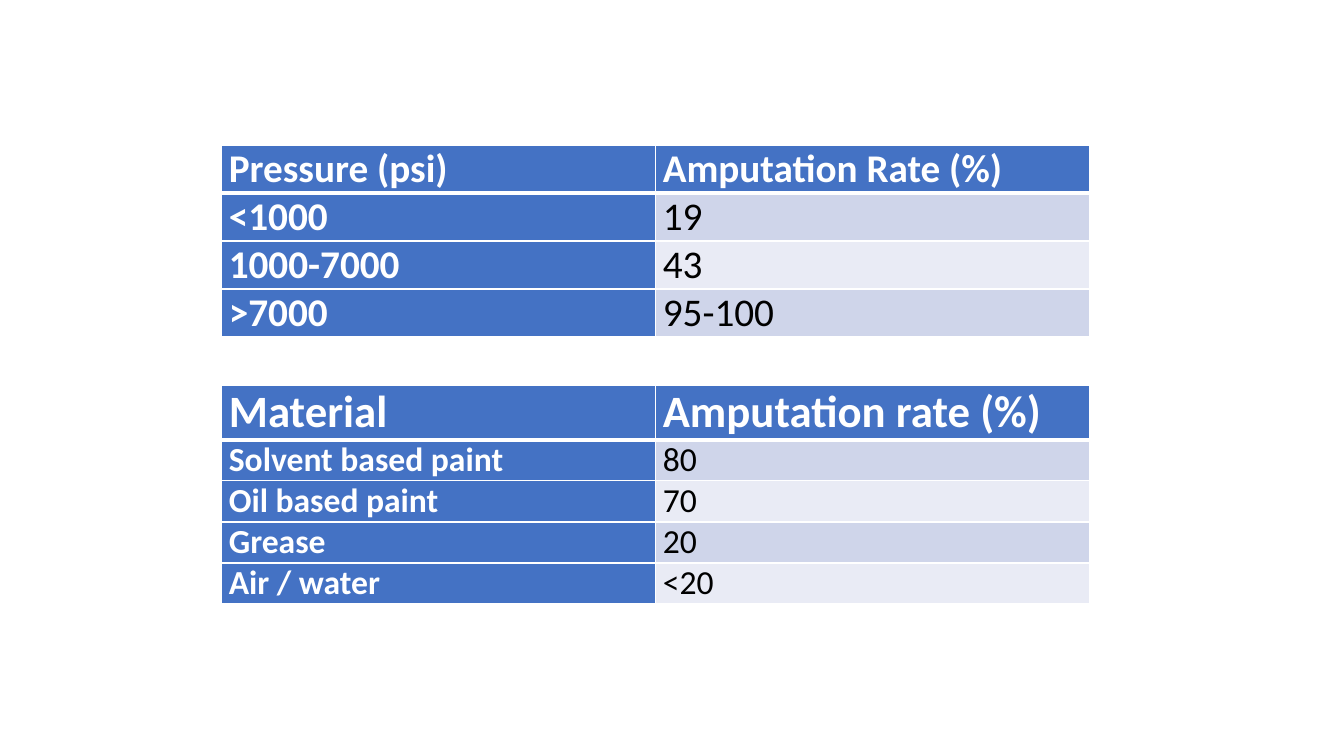
from lxml.etree import SubElement
from pptx import Presentation
from pptx.dml.color import RGBColor
from pptx.oxml.ns import qn
from pptx.util import Inches, Pt

# Content: top edge, header and body text sizes, header and body row heights
TABLES = [
    {
        "top": 1.44, "sizes": (28, 28), "heights": (0.47, 0.47),
        "rows": [
            ("Pressure (psi)", "Amputation Rate (%)"),
            ("<1000", "19"),
            ("1000-7000", "43"),
            (">7000", "95-100"),
        ],
    },
    {
        "top": 3.82, "sizes": (32, 24), "heights": (0.53, 0.4),
        "rows": [
            ("Material", "Amputation rate (%)"),
            ("Solvent based paint", "80"),
            ("Oil based paint", "70"),
            ("Grease", "20"),
            ("Air / water", "<20"),
        ],
    },
]
COLORS = {
    "heading": "4472C4", "odd": "CFD5EA", "even": "E9EBF5",
    "white": "FFFFFF", "black": "000000",
}
FONT = "Calibri"
LEFT, TABLE_WIDTH = 2.2, 8.61


def color(name):
    return RGBColor.from_string(COLORS[name])


def set_borders(cell, row):
    # White grid, with a thicker rule under the header row
    widths = {"L": 1, "R": 1, "T": 3 if row == 1 else 1, "B": 3 if row == 0 else 1}
    properties = cell._tc.get_or_add_tcPr()
    for side, width in widths.items():
        line = SubElement(properties, qn(f"a:ln{side}"), w=str(Pt(width)))
        fill = SubElement(line, qn("a:solidFill"))
        SubElement(fill, qn("a:srgbClr"), val=COLORS["white"])


def format_cell(cell, text, row, column, size):
    is_heading = row == 0 or column == 0
    band = "odd" if row % 2 else "even"
    set_borders(cell, row)
    cell.fill.solid()
    cell.fill.fore_color.rgb = color("heading" if is_heading else band)
    cell.margin_left = cell.margin_right = Inches(0.07)
    cell.margin_top = cell.margin_bottom = 0
    cell.text_frame.text = text
    font = cell.text_frame.paragraphs[0].runs[0].font
    font.name, font.size, font.bold = FONT, Pt(size), is_heading
    font.color.rgb = color("white" if is_heading else "black")


def add_rate_table(slide, content):
    rows = content["rows"]
    header_height, body_height = content["heights"]
    total_height = header_height + body_height * (len(rows) - 1)
    table = slide.shapes.add_table(
        len(rows), 2, Inches(LEFT), Inches(content["top"]),
        Inches(TABLE_WIDTH), Inches(total_height)).table
    table.first_col = True
    for row, texts in enumerate(rows):
        kind = 0 if row == 0 else 1
        table.rows[row].height = Inches(content["heights"][kind])
        for column, text in enumerate(texts):
            format_cell(table.cell(row, column), text, row, column,
                        content["sizes"][kind])


def main():
    presentation = Presentation()
    presentation.slide_width = Inches(13.33)
    presentation.slide_height = Inches(7.5)
    slide = presentation.slides.add_slide(presentation.slide_layouts[6])
    for content in TABLES:
        add_rate_table(slide, content)
    presentation.save("out.pptx")


if __name__ == "__main__":
    main()
